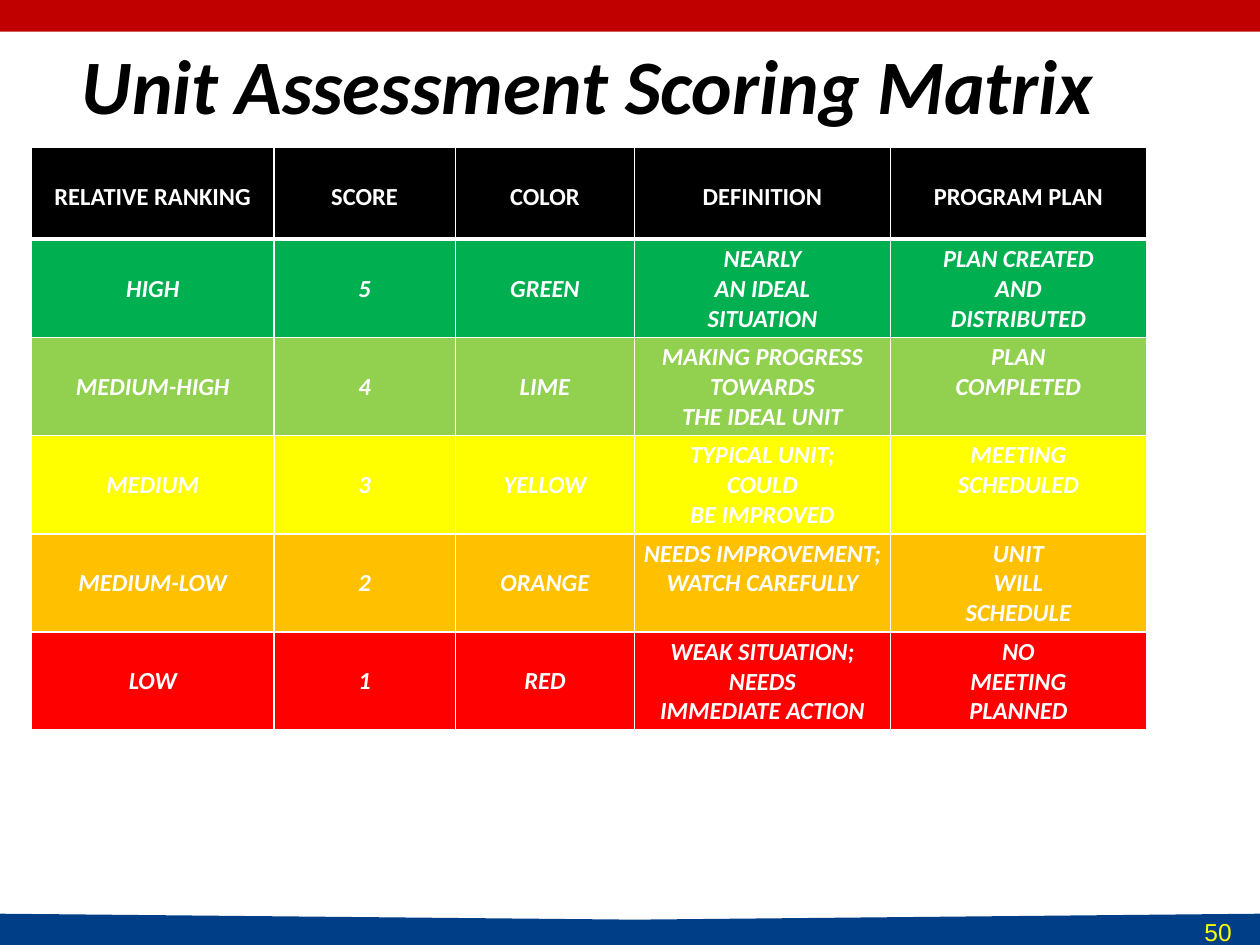
"""Build the unit assessment scoring matrix slide."""
from dataclasses import dataclass

from lxml import etree
from pptx import Presentation
from pptx.dml import color, fill
from pptx.enum import shapes, text
from pptx.oxml import ns
from pptx.slide import Slide
from pptx.table import _Cell
from pptx.text import text as t
from pptx import util as u

WHITE = "FFFFFF"
COLUMN_WIDTHS = (4.88, 3.66, 3.61, 5.16, 5.16)
HEADER_HEIGHT, ROW_HEIGHT = 1.85, 1.98
SIDE_MARGIN, EDGE_MARGIN, ONE_LINE_TOP = 0.18, 0.1, 0.7
THIN, THICK = 1, 3


@dataclass(frozen=True)
class MatrixRow:
    labels: tuple[str, ...]
    fill_color: str
    header: bool = False


@dataclass(frozen=True)
class Label:
    content: str
    left: float
    top: float
    width: float
    height: float
    font_name: str
    size: int
    font_color: str
    emphasis: bool = False
    centered: bool = False


ROWS = (
    MatrixRow(("RELATIVE RANKING", "SCORE", "COLOR", "DEFINITION", "PROGRAM PLAN"), "000000", True),
    MatrixRow(("HIGH", "5", "GREEN", "NEARLY\nAN IDEAL\nSITUATION",
               "PLAN CREATED\nAND\nDISTRIBUTED"), "00B050"),
    MatrixRow(("MEDIUM-HIGH", "4", "LIME", "MAKING PROGRESS TOWARDS\nTHE IDEAL UNIT",
               "PLAN\nCOMPLETED"), "92D050"),
    MatrixRow(("MEDIUM", "3", "YELLOW", "TYPICAL UNIT;\nCOULD\nBE IMPROVED",
               "MEETING\nSCHEDULED"), "FFFF00"),
    MatrixRow(("MEDIUM-LOW", "2", "ORANGE", "NEEDS IMPROVEMENT;\nWATCH CAREFULLY",
               "UNIT\nWILL\nSCHEDULE"), "FFC000"),
    MatrixRow(("LOW", "1", "RED", "WEAK SITUATION;\nNEEDS\nIMMEDIATE ACTION",
               "NO\nMEETING\nPLANNED"), "FF0000"),
)
TITLE = Label("Unit Assessment Scoring Matrix", -0.84, 0.64, 25.4, 2.13,
              "Calibri", 44, "000000", emphasis=True, centered=True)
PAGE_NUMBER = Label("50", 24.03, 18.36, 1.47, 1.02, "Arial", 14, "FFFF00")


def paint(target: fill.FillFormat, hex_color: str) -> None:
    target.solid()
    target.fore_color.rgb = color.RGBColor.from_string(hex_color)


def style(paragraph: t._Paragraph, name: str, size: int, hex_color: str,
          bold: bool, italic: bool, centered: bool) -> None:
    paragraph.alignment = text.PP_ALIGN.CENTER if centered else text.PP_ALIGN.LEFT
    font = paragraph.font
    font.name, font.size, font.bold, font.italic = name, u.Pt(size), bold, italic
    paint(font.fill, hex_color)


def draw_label(slide: Slide, label: Label) -> None:
    box = slide.shapes.add_textbox(u.Cm(label.left), u.Cm(label.top),
                                   u.Cm(label.width), u.Cm(label.height))
    frame = box.text_frame
    frame.word_wrap = True
    frame.text = label.content
    style(frame.paragraphs[0], label.font_name, label.size, label.font_color,
          label.emphasis, label.emphasis, label.centered)


def draw_bands(slide: Slide) -> None:
    top_band = slide.shapes.add_shape(shapes.MSO_SHAPE.RECTANGLE, 0, 0, u.Cm(25.4), u.Cm(0.64))
    builder = slide.shapes.build_freeform(0, u.Cm(18.42))
    corners = ((12.8, 18.54), (25.4, 18.42), (25.4, 19.05), (0, 19.05))
    builder.add_line_segments([(u.Cm(x), u.Cm(y)) for x, y in corners], close=True)
    for band, hex_color in ((top_band, "C00000"), (builder.convert_to_shape(), "003F87")):
        band.shadow.inherit = False
        paint(band.fill, hex_color)
        band.line.fill.background()


def add_borders(cell: _Cell, top: int, bottom: int) -> None:
    properties = cell._tc.get_or_add_tcPr()
    for side, points in (("L", THIN), ("R", THIN), ("T", top), ("B", bottom)):
        line = etree.SubElement(properties, ns.qn(f"a:ln{side}"), w=str(u.Pt(points)))
        solid = etree.SubElement(line, ns.qn("a:solidFill"))
        etree.SubElement(solid, ns.qn("a:srgbClr"), val=WHITE)


def draw_cell(cell: _Cell, content: str, row: MatrixRow, below_header: bool) -> None:
    add_borders(cell, THICK if below_header else THIN, THICK if row.header else THIN)
    paint(cell.fill, row.fill_color)
    cell.margin_left = cell.margin_right = u.Cm(SIDE_MARGIN)
    cell.margin_top = u.Cm(EDGE_MARGIN if "\n" in content else ONE_LINE_TOP)
    cell.margin_bottom = u.Cm(EDGE_MARGIN)
    cell.text = content
    for paragraph in cell.text_frame.paragraphs:
        style(paragraph, "Calibri", 14, WHITE, True, not row.header, True)


def draw_matrix(slide: Slide) -> None:
    heights = [HEADER_HEIGHT if row.header else ROW_HEIGHT for row in ROWS]
    table = slide.shapes.add_table(len(ROWS), len(COLUMN_WIDTHS), u.Cm(0.64), u.Cm(2.97),
                                   u.Cm(sum(COLUMN_WIDTHS)), u.Cm(sum(heights))).table
    for column, width in zip(table.columns, COLUMN_WIDTHS):
        column.width = u.Cm(width)
    for index, (row, height) in enumerate(zip(ROWS, heights)):
        table.rows[index].height = u.Cm(height)
        for cell, content in zip(table.rows[index].cells, row.labels):
            draw_cell(cell, content, row, index == 1)


def main() -> None:
    presentation = Presentation()
    presentation.slide_width, presentation.slide_height = u.Cm(25.4), u.Cm(19.05)
    slide = presentation.slides.add_slide(presentation.slide_layouts[6])
    paint(slide.background.fill, WHITE)
    draw_bands(slide)
    draw_label(slide, TITLE)
    draw_matrix(slide)
    draw_label(slide, PAGE_NUMBER)
    presentation.save("out.pptx")


if __name__ == "__main__":
    main()
